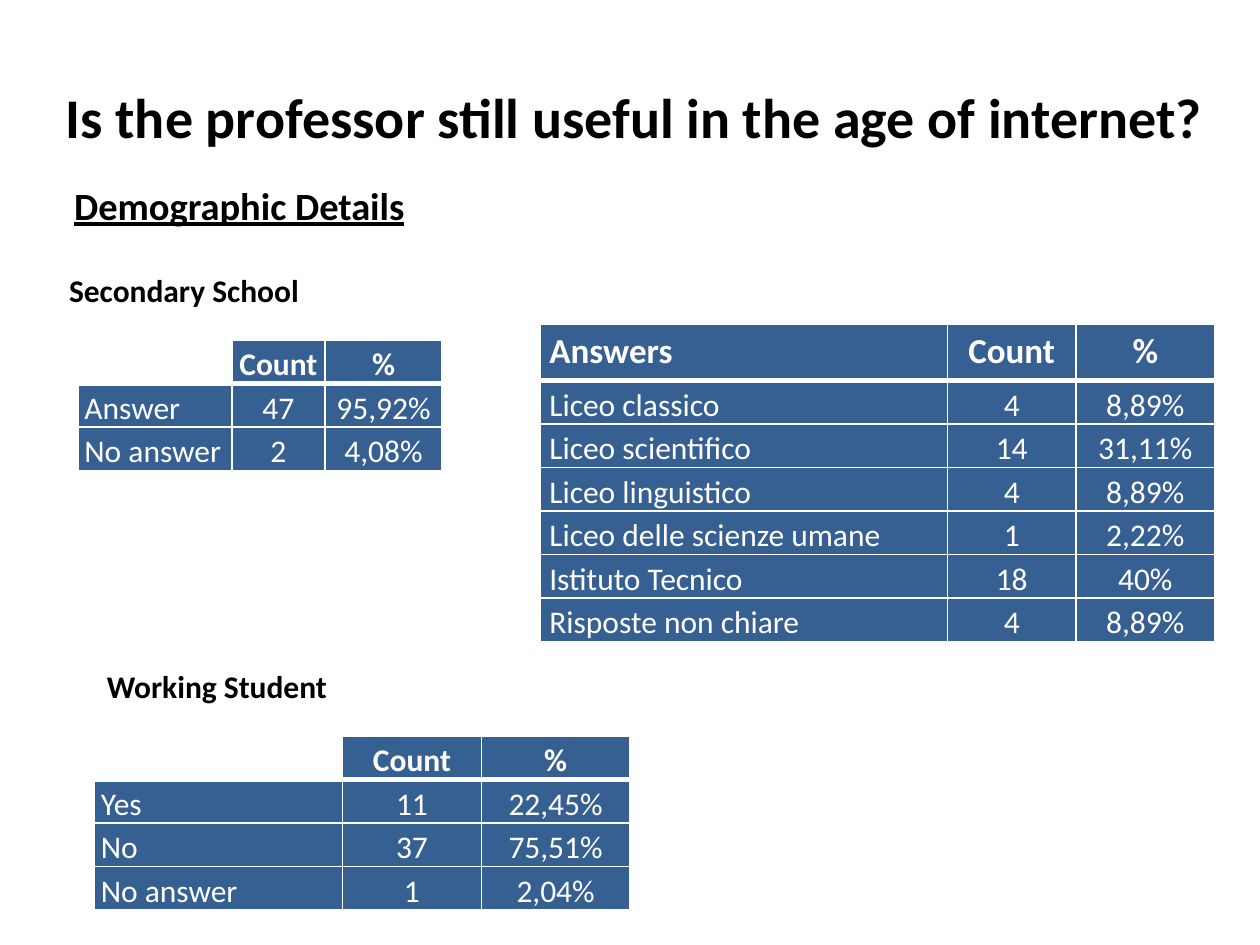
from lxml import etree
from pptx import Presentation
from pptx.dml.color import RGBColor
from pptx.enum.text import MSO_ANCHOR, PP_ALIGN
from pptx.oxml.ns import qn
from pptx.util import Inches, Pt

TOP, MIDDLE, BOTTOM = MSO_ANCHOR.TOP, MSO_ANCHOR.MIDDLE, MSO_ANCHOR.BOTTOM
LEFT, CENTER = PP_ALIGN.LEFT, PP_ALIGN.CENTER
HUES = {"ink": "000000", "paper": "FFFFFF", "cell": "376092"}

deck = Presentation()
deck.slide_width, deck.slide_height = Inches(10), Inches(7.5)
slide = deck.slides.add_slide(deck.slide_layouts[6])

# A grid of 100 columns by 75 rows
COL = deck.slide_width / 100
ROW = deck.slide_height / 75


def write(para, text, size, hue, bold):
    run = para.add_run()
    run.text = text
    run.font.name = "Calibri"
    run.font.size = Pt(size)
    run.font.bold = bold
    run.font.color.rgb = RGBColor.from_string(HUES[hue])
    return run


def edge(cell, widths):
    """Draw the cell's left, right, top and bottom borders, widths in points."""
    props = cell._tc.get_or_add_tcPr()
    for spot, (side, width) in enumerate(zip("LRTB", widths)):
        line = etree.Element(qn(f"a:ln{side}"), w=str(Pt(width)))
        fill = etree.SubElement(line, qn("a:solidFill"))
        etree.SubElement(fill, qn("a:srgbClr"), val=HUES["paper"])
        props.insert(spot, line)


# Title and headings: text, left, top, width, height, size, alignment
heads = [
    ("Is the professor still useful in the age of internet?",
     3.5, 3, 93.7, 12.5, 32, CENTER),
    ("Demographic Details", 4.9, 13.9, 28.5, 4.7, 22, LEFT),
    ("Secondary School", 4.5, 21, 20.4, 4, 18, LEFT),
    ("Working Student", 7.5, 52.4, 19.6, 4, 18, LEFT),
]
for text, left, top, width, height, size, align in heads:
    box = slide.shapes.add_textbox(
        int(left * COL), int(top * ROW), int(width * COL), int(height * ROW))
    frame = box.text_frame
    frame.word_wrap = align == CENTER
    frame.vertical_anchor = MIDDLE
    para = frame.paragraphs[0]
    para.alignment = align
    run = write(para, text, size, "ink", True)
    run.font.underline = text == "Demographic Details"

# Tables: left, top, column widths, header height, header size,
# side margin, anchor, rows of text
LINE = 3.45
tables = [
    (42.9, 25.7, (32.3, 10.2, 11), 4.5, 20, 0.7, TOP, [
        ("Answers", "Count", "%"),
        ("Liceo classico", "4", "8,89%"),
        ("Liceo scientifico", "14", "31,11%"),
        ("Liceo linguistico", "4", "8,89%"),
        ("Liceo delle scienze umane", "1", "2,22%"),
        ("Istituto Tecnico", "18", "40%"),
        ("Risposte non chiare", "4", "8,89%"),
    ]),
    (6.2, 27, (12.2, 7.4, 9.3), LINE, 18, 0.5, BOTTOM, [
        ("", "Count", "%"),
        ("Answer", "47", "95,92%"),
        ("No answer", "2", "4,08%"),
    ]),
    (7.5, 58.4, (19.7, 11, 11.8), LINE, 18, 0.5, BOTTOM, [
        ("", "Count", "%"),
        ("Yes", "11", "22,45%"),
        ("No", "37", "75,51%"),
        ("No answer", "1", "2,04%"),
    ]),
]
for left, top, widths, first, size, side, anchor, rows in tables:
    tall = first + LINE * (len(rows) - 1)
    grid = slide.shapes.add_table(
        len(rows), len(widths), int(left * COL), int(top * ROW),
        int(sum(widths) * COL), int(tall * ROW)).table
    grid.horz_banding = False
    for col, width in zip(grid.columns, widths):
        col.width = int(width * COL)
    for r, texts in enumerate(rows):
        head = r == 0
        grid.rows[r].height = int((first if head else LINE) * ROW)
        for c, text in enumerate(texts):
            cell = grid.cell(r, c)
            cell.margin_left = cell.margin_right = int(side * COL)
            cell.margin_top = cell.margin_bottom = 0
            cell.vertical_anchor = anchor
            cell.fill.solid()
            cell.fill.fore_color.rgb = RGBColor.from_string(
                HUES["cell" if text else "paper"])
            edge(cell, (1, 1, 3 if r == 1 else 1, 3 if head else 1))
            if text:
                para = cell.text_frame.paragraphs[0]
                para.alignment = CENTER if c else LEFT
                para.line_spacing = 1.15
                write(para, text, size if head else 18, "paper", head)

deck.save("out.pptx")
